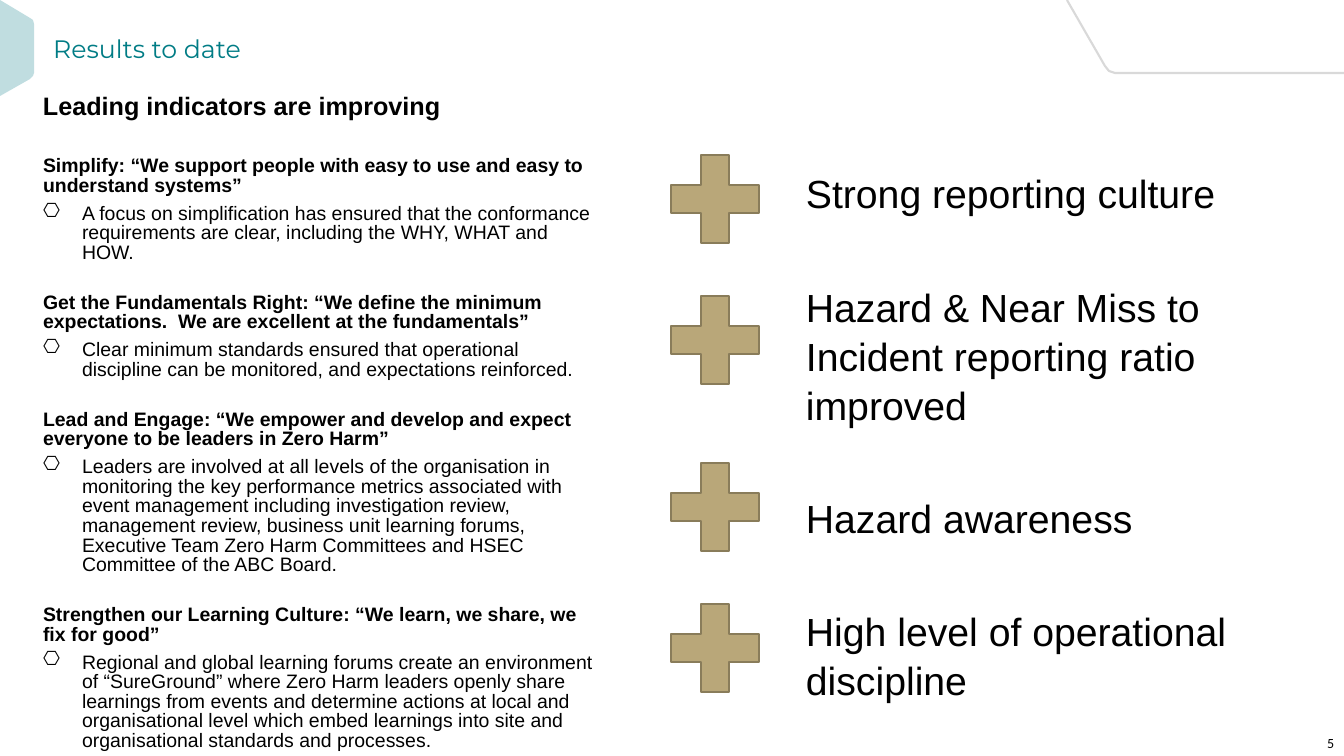
from lxml import etree
from pptx import Presentation, util as u
from pptx.dml.color import RGBColor
from pptx.enum import shapes, text
from pptx.oxml.ns import qn

# Content
TITLE = "Results to date"
LEAD = "Leading indicators are improving"
PAGE = "5"
THEMES = [
    ("Simplify: “We support people with easy to use and easy to understand systems”",
     "A focus on simplification has ensured that the conformance requirements are "
     "clear, including the WHY, WHAT and HOW."),
    ("Get the Fundamentals Right: “We define the minimum expectations.  "
     "We are excellent at the fundamentals”",
     "Clear minimum standards ensured that operational discipline can be monitored, "
     "and expectations reinforced."),
    ("Lead and Engage: “We empower and develop and expect everyone to be leaders in Zero Harm”",
     "Leaders are involved at all levels of the organisation in monitoring the key "
     "performance metrics associated with event management including investigation "
     "review, management review, business unit learning forums, Executive Team Zero "
     "Harm Committees and HSEC Committee of the ABC Board."),
    ("Strengthen our Learning Culture: “We learn, we share, we fix for good”",
     "Regional and global learning forums create an environment of “SureGround” where "
     "Zero Harm leaders openly share learnings from events and determine actions at "
     "local and organisational level which embed learnings into site and "
     "organisational standards and processes."),
]
# Result and the top of its plus sign
RESULTS = [
    ("Strong reporting culture", 139),
    ("Hazard & Near Miss to Incident reporting ratio improved", 280),
    ("Hazard awareness", 447),
    ("High level of operational discipline", 588),
]
HEX = [(0, 0), (30, 18), (33, 20), (34, 24), (34, 73), (33, 76), (30, 79), (0, 96)]
EDGE = [(1067, 0), (1105, 66), (1109, 71), (1115, 73), (1344, 73)]
COLOR = {"teal": "007C85", "mint": "82BDC3", "grey": "D9D9D9",
         "sand": "B9A779", "rim": "897C5A", "black": "000000"}
PX = 914400 / 100.8


def px(n):
    return u.Emu(round(n * PX))


def rgb(name):
    return RGBColor.from_string(COLOR[name])


deck = Presentation()
deck.slide_width, deck.slide_height = px(1344), px(756)
slide = deck.slides.add_slide(deck.slide_layouts[5])


def place(item, x, y, w, h):
    item.left, item.top, item.width, item.height = px(x), px(y), px(w), px(h)


def box(x, y, w, h):
    frame = slide.shapes.add_textbox(px(x), px(y), px(w), px(h)).text_frame
    frame.word_wrap = True
    frame.margin_left = 0
    return frame


def style(para, size, font="Arial", color="black", bold=False):
    for run in para.runs:
        run.font.size, run.font.name, run.font.bold = u.Pt(size), font, bold
        run.font.color.rgb = rgb(color)


def write(frame, words, first, size, bold=False, before=3, line=1.0):
    para = frame.paragraphs[0] if first else frame.add_paragraph()
    para.text = words
    para.line_spacing = line
    para.space_before = u.Pt(0 if first else before)
    para.space_after = u.Pt(3)
    style(para, size, bold=bold)
    return para


def outline(points, close):
    pen = slide.shapes.build_freeform(*points[0], scale=PX)
    pen.add_line_segments(points[1:], close=close)
    form = pen.convert_to_shape()
    form.shadow.inherit = False
    return form


# Corner decorations
edge = outline(EDGE, False)
edge.fill.background()
edge.line.color.rgb = rgb("grey")
edge.line.width = u.Pt(1.5)

badge = outline(HEX, True)
badge.fill.solid()
badge.fill.fore_color.rgb = rgb("mint")
badge.line.fill.background()
tint = badge.fill._xPr.find(qn("a:solidFill"))[0]
etree.SubElement(tint, qn("a:alpha")).set("val", "50000")

# Title and lead line
title = slide.shapes.title
place(title, 43, 14, 1267, 73)
title.text_frame.text = TITLE
title.text_frame.vertical_anchor = text.MSO_ANCHOR.MIDDLE
head = title.text_frame.paragraphs[0]
head.alignment = text.PP_ALIGN.LEFT
head.line_spacing = 0.9
style(head, 18, "Montserrat", "teal")

write(box(43, 85, 1267, 61), LEAD, True, 18, bold=True)

# Themes, each with one bullet
left = box(43, 152, 570, 590)
for i, (theme, detail) in enumerate(THEMES):
    write(left, theme, i == 0, 13.9, bold=True, before=18.5, line=0.84)
    para = write(left, detail, False, 13.9, line=0.84)
    props = para._p.get_or_add_pPr()
    props.set("marL", str(px(39)))
    props.set("indent", str(-px(39)))
    etree.SubElement(props, qn("a:buChar")).set("char", "⎔")

# Results with plus signs
right = box(806, 163, 514, 567)
for i, (result, top) in enumerate(RESULTS):
    write(right, result, i == 0, 28, before=43, line=1.04)
    plus = slide.shapes.add_shape(shapes.MSO_SHAPE.MATH_PLUS,
                                  px(655), px(top), px(120), px(120))
    plus.shadow.inherit = False
    plus.fill.solid()
    plus.fill.fore_color.rgb = rgb("sand")
    plus.line.color.rgb = rgb("rim")
    plus.line.width = u.Pt(1)

# Page number
foot = box(1251, 716, 93, 40)
foot.vertical_anchor = text.MSO_ANCHOR.BOTTOM
foot.text = PAGE
foot.paragraphs[0].alignment = text.PP_ALIGN.RIGHT
style(foot.paragraphs[0], 10, "Calibri")

deck.save("out.pptx")
